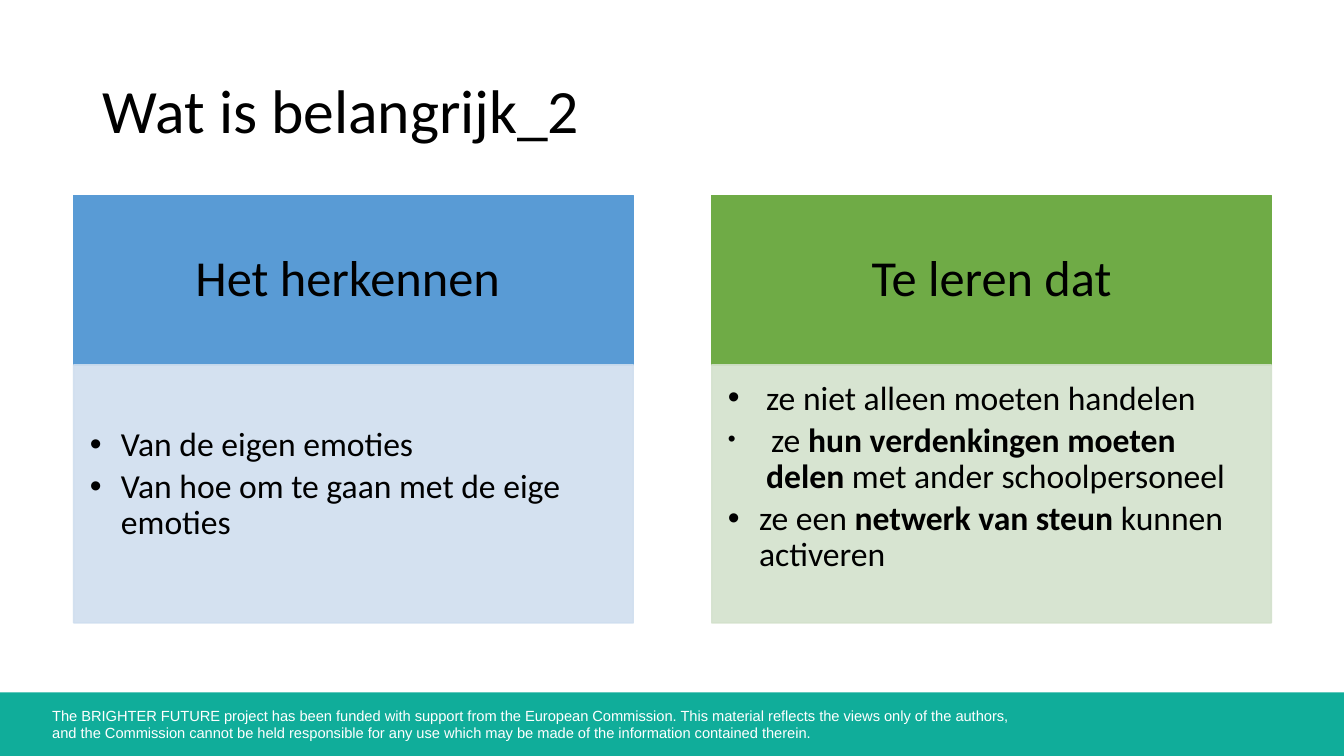
from lxml.etree import SubElement
from pptx import Presentation
from pptx.dml.color import RGBColor
from pptx.enum.shapes import MSO_SHAPE
from pptx.enum.text import MSO_ANCHOR, MSO_AUTO_SIZE, PP_ALIGN
from pptx.oxml.ns import qn
from pptx.util import Inches, Pt

WIDE, HIGH = 13.33, 7.5
BLACK = RGBColor(0x00, 0x00, 0x00)
WHITE = RGBColor(0xFF, 0xFF, 0xFF)
TEAL = RGBColor(0x10, 0xAD, 0x9A)
BLUE = RGBColor(0x59, 0x9B, 0xD5)
PALE_BLUE = RGBColor(0xCF, 0xDE, 0xEF)
GREEN = RGBColor(0x6F, 0xAB, 0x46)
PALE_GREEN = RGBColor(0xD3, 0xE1, 0xCC)

# Shares of the slide, in percent
HEAD_TOP, HEAD_HIGH = 25.87, 22.4
LIST_TOP, LIST_HIGH = 48.27, 34.13
PANEL_WIDE = 41.64
FOOT_TOP, FOOT_HIGH = 91.6, 8.4

FOOTER = (
    "The BRIGHTER FUTURE project has been funded with support from the European Commission. "
    "This material reflects the views only of the authors, \v"
    "and the Commission cannot be held responsible for any use which may be made "
    "of the information contained therein."
)

# Each list item is an indent and its runs: text, size, bold
PANELS = [
    (5.48, "Het herkennen ", BLUE, PALE_BLUE, 0.62, [
        (0.31, [("Van de eigen emoties", 24, False)]),
        (0.31, [("Van hoe om te gaan met de eige emoties", 24, False)]),
    ]),
    (52.96, "Te leren dat", GREEN, PALE_GREEN, 0.16, [
        (0.38, [("ze niet alleen moeten handelen", 24, False)]),
        (0.38, [(" ", 16, False), ("ze ", 24, False),
                ("hun verdenkingen moeten delen ", 24, True),
                ("met ander schoolpersoneel", 24, False)]),
        (0.31, [("ze een ", 24, False), ("netwerk van steun ", 24, True),
                ("kunnen activeren", 24, False)]),
    ]),
]


class Page:
    def __init__(self, deck):
        self.slide = deck.slides.add_slide(deck.slide_layouts.get_by_name("Comparison"))
        self.font = "Calibri"

    def area(self, left, top, wide, high):
        """Turn percentages of the slide into lengths."""
        return (Inches(left * WIDE / 100), Inches(top * HIGH / 100),
                Inches(wide * WIDE / 100), Inches(high * HIGH / 100))

    def holder(self, index, area, anchor, insets):
        """Place a placeholder and return it."""
        shape = self.slide.placeholders[index]
        shape.left, shape.top, shape.width, shape.height = self.area(*area)
        frame = shape.text_frame
        frame.auto_size, frame.word_wrap = MSO_AUTO_SIZE.NONE, True
        frame.vertical_anchor = anchor
        (frame.margin_left, frame.margin_top,
         frame.margin_right, frame.margin_bottom) = map(Inches, insets)
        return shape

    def style(self, run, size, color=BLACK, bold=False, font=None):
        run.font.name, run.font.size = font or self.font, Pt(size)
        run.font.color.rgb, run.font.bold = color, bold

    def paint(self, shape, color, alpha=None):
        shape.fill.solid()
        shape.fill.fore_color.rgb = color
        shape.line.color.rgb = color
        shape.line.width = Pt(1)
        if alpha:
            for tint in shape.fill._xPr.iter(qn("a:srgbClr")):
                SubElement(tint, qn("a:alpha"), val=str(alpha * 1000))

    def line(self, shape, text, size, align):
        """Fill a placeholder with one line of text."""
        shape.text_frame.text = text
        para = shape.text_frame.paragraphs[0]
        para.alignment, para.line_spacing, para.space_before = align, 0.9, Pt(0)
        self.style(para.runs[0], size)

    def title(self, text):
        shape = self.holder(0, (6.9, 5.33, 86.27, 19.33), MSO_ANCHOR.MIDDLE,
                            (0.1, 0.05, 0.1, 0.05))
        self.line(shape, text, 44, PP_ALIGN.LEFT)

    def head(self, index, left, text, color):
        shape = self.holder(index, (left, HEAD_TOP, PANEL_WIDE, HEAD_HIGH),
                            MSO_ANCHOR.MIDDLE, (0.35, 0.2, 0.35, 0.2))
        self.paint(shape, color)
        self.line(shape, text, 36, PP_ALIGN.CENTER)

    def bullet(self, para, indent):
        props = para._p.get_or_add_pPr()
        props.set("marL", str(Inches(indent)))
        props.set("indent", str(-Inches(indent)))
        tint = SubElement(props, qn("a:buClr"))
        SubElement(tint, qn("a:srgbClr"), val=str(BLACK))
        SubElement(props, qn("a:buFont"), typeface="Arial")
        SubElement(props, qn("a:buChar"), char="•")

    def items(self, index, left, color, inset, rows):
        shape = self.holder(index, (left, LIST_TOP, PANEL_WIDE, LIST_HIGH),
                            MSO_ANCHOR.TOP, (0.16, inset, 0.22, 0.24))
        self.paint(shape, color, 89)
        frame = shape.text_frame
        for place, (indent, parts) in enumerate(rows):
            para = frame.add_paragraph() if place else frame.paragraphs[0]
            self.bullet(para, indent)
            para.line_spacing = 0.9
            para.space_before = Pt(4.2 if place else 0)
            for text, size, bold in parts:
                run = para.add_run()
                run.text = text
                self.style(run, size, bold=bold)

    def footer(self, text):
        shapes = self.slide.shapes
        bar = shapes.add_shape(MSO_SHAPE.RECTANGLE, *self.area(0, FOOT_TOP, 100, FOOT_HIGH))
        bar.shadow.inherit = False
        bar.fill.solid()
        bar.fill.fore_color.rgb = TEAL
        bar.line.fill.background()
        frame = shapes.add_textbox(*self.area(3.15, 92.8, 75.02, 6)).text_frame
        frame.word_wrap = True
        frame.text = text
        for run in frame.paragraphs[0].runs:
            self.style(run, 10.5, WHITE, font="Arial")


def main():
    deck = Presentation()
    deck.slide_width, deck.slide_height = Inches(WIDE), Inches(HIGH)
    page = Page(deck)
    page.title("Wat is belangrijk_2")
    for order, (left, name, dark, pale, inset, rows) in enumerate(PANELS):
        page.head(1 + 2 * order, left, name, dark)
        page.items(2 + 2 * order, left, pale, inset, rows)
    page.footer(FOOTER)
    deck.save("out.pptx")


if __name__ == "__main__":
    main()
